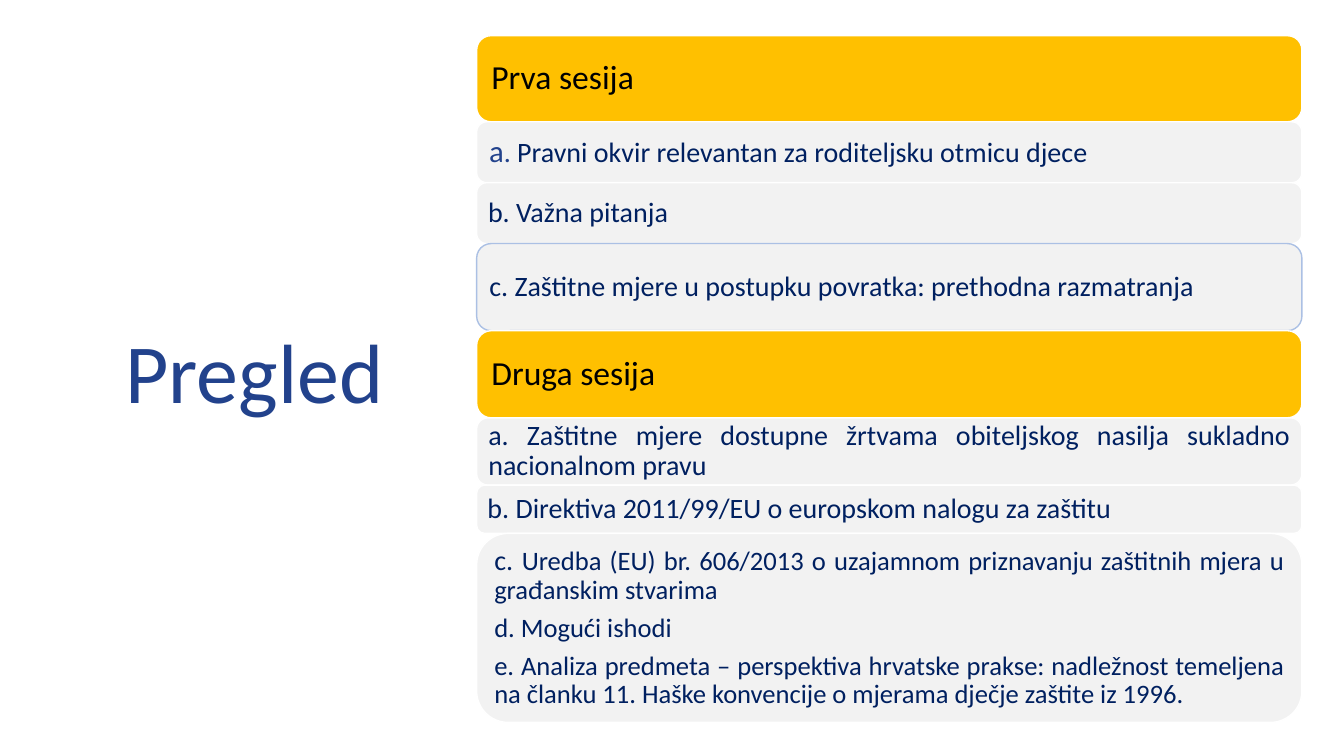
from pptx import Presentation
from pptx import util as u
from pptx.dml.color import RGBColor
from pptx.enum import shapes, text

PX = 9525  # EMU per px, 96 px to the inch
FONT = "Calibri"
BLUE = RGBColor(0x22, 0x42, 0x8C)
NAVY = RGBColor(0x00, 0x20, 0x60)
BLACK = RGBColor(0x00, 0x00, 0x00)
WHITE = RGBColor(0xFF, 0xFF, 0xFF)
AMBER = RGBColor(0xFF, 0xC0, 0x00)
GREY = RGBColor(0xF2, 0xF2, 0xF2)
PALE_BLUE = RGBColor(0xAB, 0xC0, 0xE4)

LEFT = text.PP_ALIGN.LEFT
JUSTIFY = text.PP_ALIGN.JUSTIFY


def px(*lengths):
    return [u.Emu(length * PX) for length in lengths]


def item(*spans, size=20, color=NAVY, align=LEFT):
    """A paragraph; each span is a text or (text, size, color)."""
    return {"spans": spans, "size": size, "color": color, "align": align}


def bar(height, *items, fill=GREY, line=WHITE, inset=8):
    return {"height": height, "items": items, "fill": fill, "line": line, "inset": inset}


def heading(height, words):
    return bar(height, item(words, size=24, color=BLACK), fill=AMBER, inset=10)


AGENDA = [
    heading(82, "Prva sesija"),
    bar(58, item(("a", 22, BLUE), (". ", 20, BLUE),
                 "Pravni okvir relevantan za roditeljsku otmicu djece"), inset=9),
    bar(58, item("b. Važna pitanja")),
    bar(83, item("c. Zaštitne mjere u postupku povratka: prethodna razmatranja"),
        line=PALE_BLUE),
    heading(83, "Druga sesija"),
    bar(64, item("a. Zaštitne mjere dostupne žrtvama obiteljskog nasilja sukladno "
                 "nacionalnom pravu", align=JUSTIFY)),
    bar(46, item("b. Direktiva 2011/99/EU o europskom nalogu za zaštitu")),
    bar(180,
        item(("c. ", 20, NAVY),
             "Uredba (EU) br. 606/2013 o uzajamnom priznavanju zaštitnih mjera u "
             "građanskim stvarima", size=19, align=JUSTIFY),
        item("d. Mogući ishodi", size=19, align=JUSTIFY),
        item("e. Analiza predmeta – perspektiva hrvatske prakse: nadležnost temeljena "
             "na članku 11. Haške konvencije o mjerama dječje zaštite iz 1996.",
             size=19, align=JUSTIFY)),
]


def write(frame, items, space_after=0):
    frame.word_wrap = True
    frame.vertical_anchor = text.MSO_ANCHOR.MIDDLE
    for index, entry in enumerate(items):
        para = frame.add_paragraph() if index else frame.paragraphs[0]
        para.alignment = entry["align"]
        para.line_spacing = 0.9
        para.space_after = u.Pt(space_after)
        para.font.name = FONT
        para.font.size = u.Pt(entry["size"])
        para.font.color.rgb = entry["color"]
        for part in entry["spans"]:
            span = para.add_run()
            if isinstance(part, str):
                span.text = part
            else:
                span.text, size, color = part
                span.font.size = u.Pt(size)
                span.font.color.rgb = color


def add_title(page, left, top, width, height):
    box = page.shapes.add_textbox(*px(left, top, width, height))
    write(box.text_frame, [item("Pregled", size=60, color=BLUE)])


def add_agenda(page, left, top, width):
    """Stack the bars downwards without gaps."""
    for entry in AGENDA:
        box = page.shapes.add_shape(shapes.MSO_SHAPE.ROUNDED_RECTANGLE,
                                    *px(left, top, width, entry["height"]))
        box.shadow.inherit = False
        box.fill.solid()
        box.fill.fore_color.rgb = entry["fill"]
        box.line.color.rgb = entry["line"]
        box.line.width = u.Pt(1)
        frame = box.text_frame
        inset, = px(entry["inset"])
        frame.margin_left = frame.margin_right = inset
        frame.margin_top = frame.margin_bottom = inset
        write(frame, entry["items"], space_after=6.5)
        top += entry["height"]


def main():
    deck = Presentation()
    deck.slide_width, deck.slide_height = px(1280, 720)
    page = deck.slides.add_slide(deck.slide_layouts[6])
    add_title(page, 110, 55, 324, 606)
    add_agenda(page, 454, 34, 786)
    deck.save("out.pptx")


if __name__ == "__main__":
    main()
